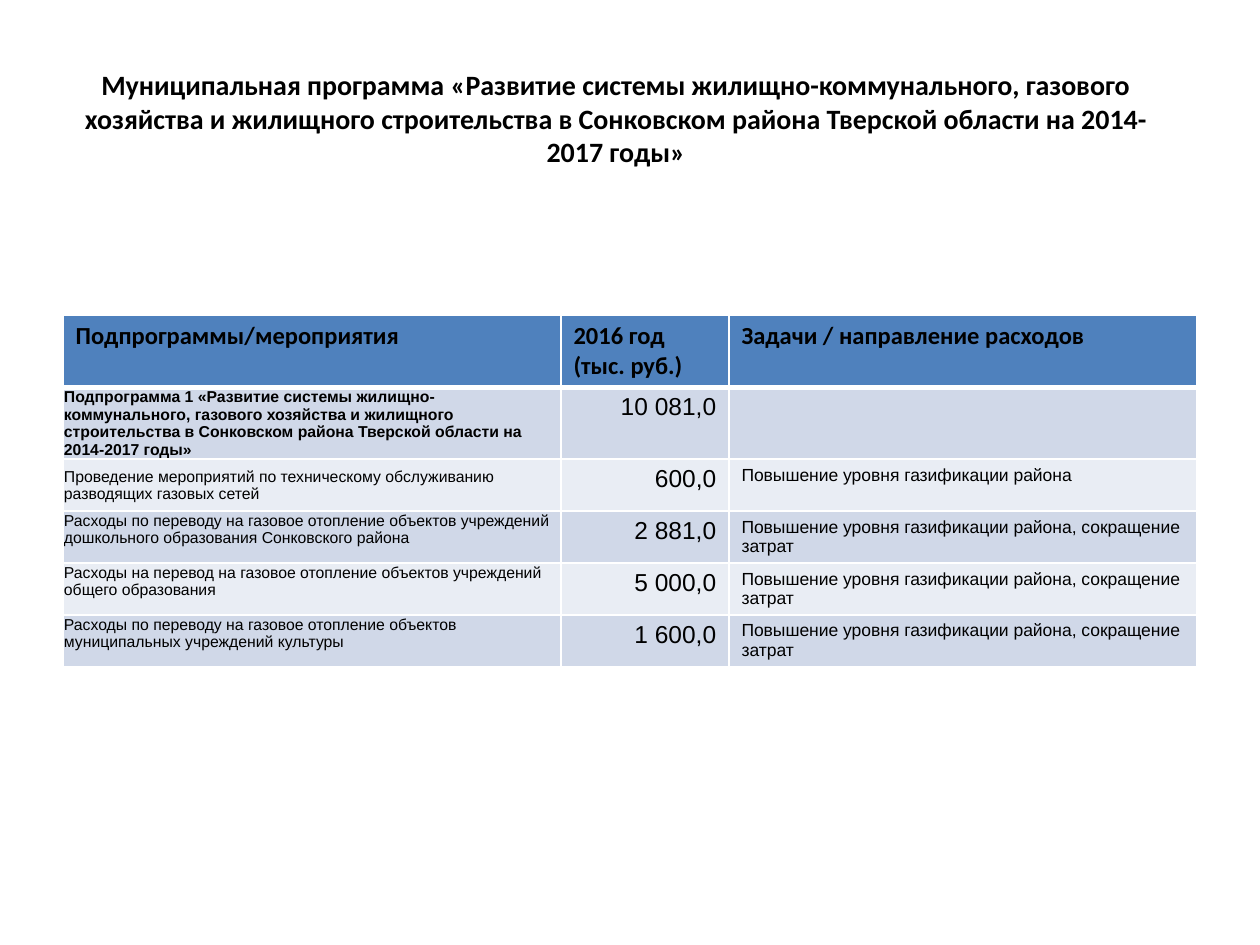
import pptx
import pptx.util
import pptx.dml.color
import pptx.enum.text
import pptx.oxml.ns
import lxml.etree

EMU_PER_PX = 914400 // 126
ALIGN = pptx.enum.text.PP_ALIGN
ANCHOR = pptx.enum.text.MSO_ANCHOR

TITLE = (
    "Муниципальная программа «Развитие системы жилищно-коммунального, газового "
    "хозяйства и жилищного строительства в Сонковском района Тверской области на 2014-2017 годы»"
)
HEADINGS = ["Подпрограммы/мероприятия", "2016 год (тыс. руб.)", "Задачи / направление расходов"]
GAS_SUPPLY = "Повышение уровня газификации района"
GAS_SAVINGS = GAS_SUPPLY + ", сокращение затрат"
MEASURES = [
    (
        "Подпрограмма 1 «Развитие системы жилищно-коммунального, газового хозяйства и жилищного "
        "строительства в Сонковском района Тверской области на 2014-2017 годы»",
        "10 081,0",
        "",
    ),
    (
        "Проведение мероприятий по техническому обслуживанию разводящих газовых сетей",
        "600,0",
        GAS_SUPPLY,
    ),
    (
        "Расходы по переводу на газовое отопление объектов учреждений дошкольного образования "
        "Сонковского района",
        "2 881,0",
        GAS_SAVINGS,
    ),
    (
        "Расходы на перевод на газовое отопление объектов учреждений общего образования",
        "5 000,0",
        GAS_SAVINGS,
    ),
    (
        "Расходы по переводу на газовое отопление объектов муниципальных учреждений культуры",
        "1 600,0",
        GAS_SAVINGS,
    ),
]
COLUMN_WIDTHS = [498, 168, 468]
COLUMN_SIZES = [9, 14, 10]
COLUMN_ALIGNS = [ALIGN.LEFT, ALIGN.RIGHT, ALIGN.LEFT]
ROW_HEIGHT = 52
BANDS = ["D0D8E8", "E9EDF4"]


def px(length):
    return pptx.util.Emu(length * EMU_PER_PX)


def color(value):
    return pptx.dml.color.RGBColor.from_string(value)


def write_text(frame, text, font, size, bold, align):
    frame.text = text
    paragraph = frame.paragraphs[0]
    paragraph.alignment = align
    for run in paragraph.runs:
        run.font.name = font
        run.font.size = pptx.util.Pt(size)
        run.font.bold = bold
        run.font.color.rgb = color("000000")


def add_title(slide):
    title = slide.shapes.title
    title.left, title.top, title.width, title.height = px(49), px(39), px(1134), px(158)
    title.text_frame.vertical_anchor = ANCHOR.MIDDLE
    title.text_frame.auto_size = pptx.enum.text.MSO_AUTO_SIZE.NONE
    write_text(title.text_frame, TITLE, "Calibri", 16, True, ALIGN.CENTER)


def set_borders(cell, top, bottom):
    qn = pptx.oxml.ns.qn
    properties = cell._tc.get_or_add_tcPr()
    for side, points in (("L", 1), ("R", 1), ("T", top), ("B", bottom)):
        line = lxml.etree.SubElement(properties, qn("a:ln" + side), w=str(pptx.util.Pt(points)))
        fill = lxml.etree.SubElement(line, qn("a:solidFill"))
        lxml.etree.SubElement(fill, qn("a:srgbClr"), val="FFFFFF")


def paint_cell(cell, fill, top=1, bottom=1):
    set_borders(cell, top, bottom)
    cell.fill.solid()
    cell.fill.fore_color.rgb = color(fill)


def fill_heading_row(table):
    for column, heading in enumerate(HEADINGS):
        cell = table.cell(0, column)
        paint_cell(cell, "4F81BD", bottom=3)
        write_text(cell.text_frame, heading, "Calibri", 14, True, ALIGN.LEFT)


def fill_measure_row(table, row, measure):
    for column, text in enumerate(measure):
        cell = table.cell(row, column)
        paint_cell(cell, BANDS[(row - 1) % 2], top=3 if row == 1 else 1)
        bold = row == 1 and column == 0
        write_text(cell.text_frame, text, "Arial", COLUMN_SIZES[column], bold, COLUMN_ALIGNS[column])
    name = table.cell(row, 0)
    name.margin_left = name.margin_top = name.margin_right = px(1)
    name.margin_bottom = 0
    name.vertical_anchor = ANCHOR.MIDDLE if row <= 2 else ANCHOR.TOP


def add_measures_table(slide):
    row_count = len(MEASURES) + 1
    table = slide.shapes.add_table(
        row_count, len(HEADINGS), px(63), px(315), px(sum(COLUMN_WIDTHS)), px(ROW_HEIGHT * row_count)
    ).table
    for column, width in zip(table.columns, COLUMN_WIDTHS):
        column.width = px(width)
    for row in table.rows:
        row.height = px(ROW_HEIGHT)
    fill_heading_row(table)
    for row, measure in enumerate(MEASURES, start=1):
        fill_measure_row(table, row, measure)


def main():
    presentation = pptx.Presentation()
    presentation.slide_width, presentation.slide_height = px(1260), px(945)
    slide = presentation.slides.add_slide(presentation.slide_layouts[5])
    add_title(slide)
    add_measures_table(slide)
    presentation.save("out.pptx")


if __name__ == "__main__":
    main()
